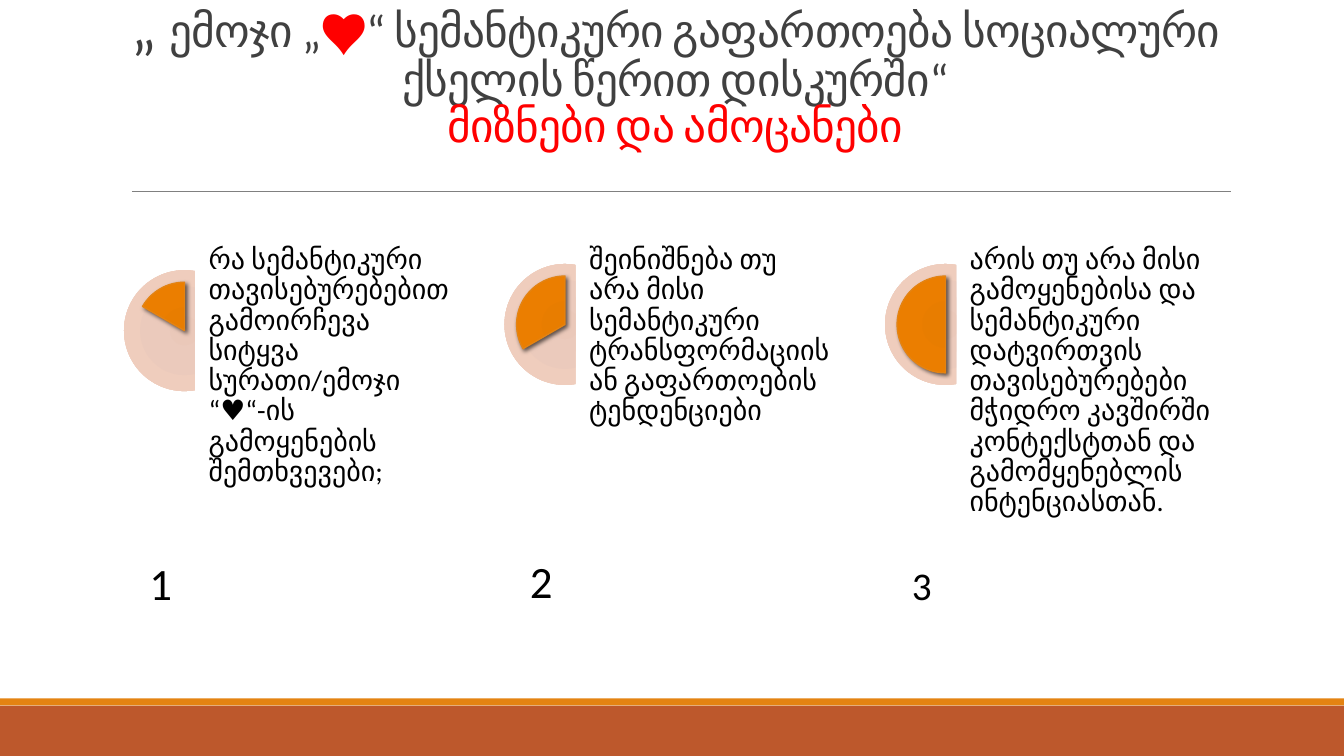
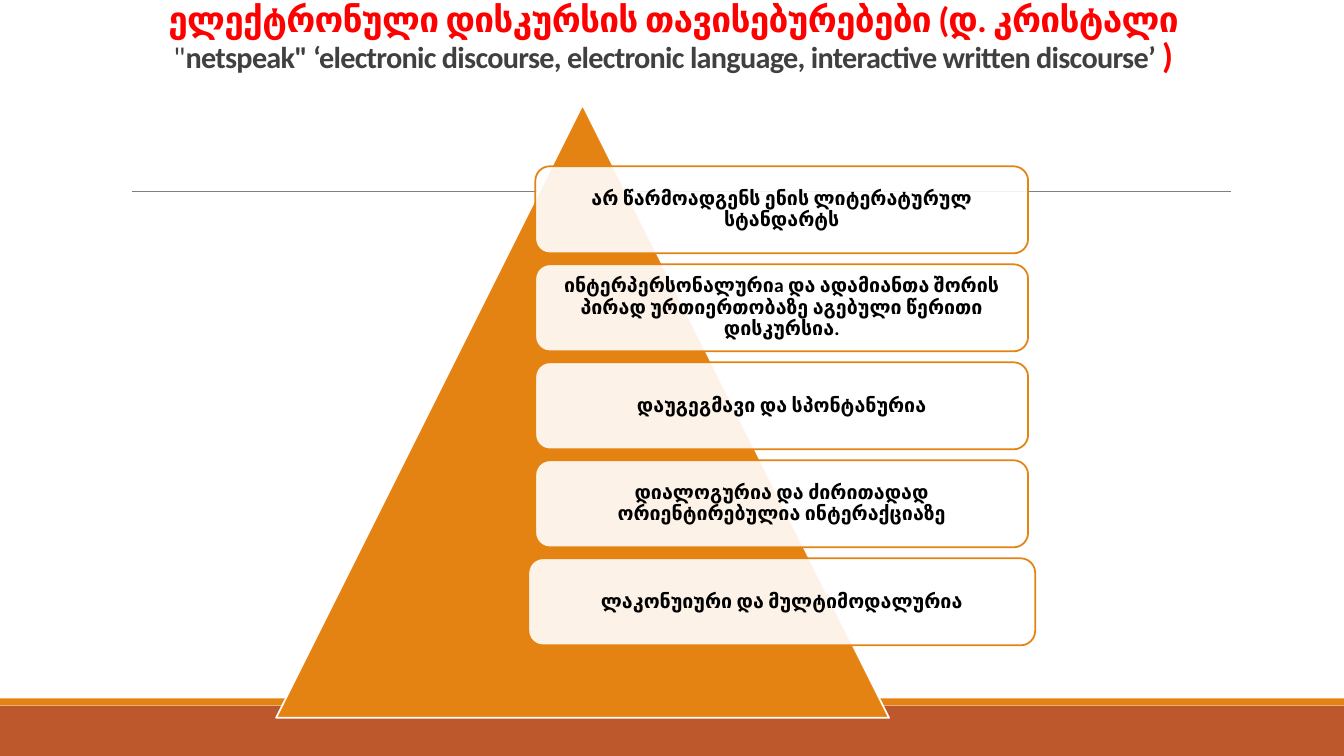
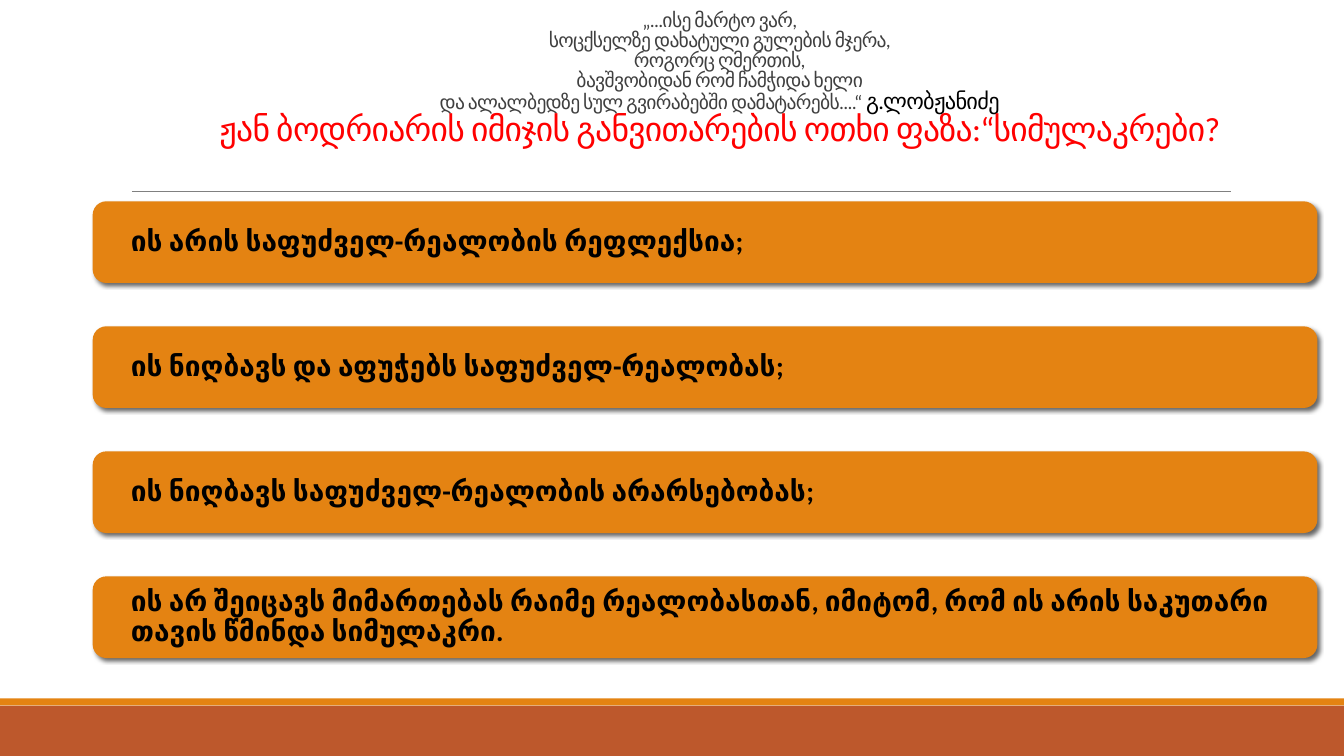
from pptx import Presentation
from pptx.dml.color import RGBColor
from pptx.enum.shapes import MSO_CONNECTOR, MSO_SHAPE
from pptx.enum.text import MSO_ANCHOR, PP_ALIGN
from pptx.oxml import parse_xml
from pptx.oxml.ns import nsdecls, qn
from pptx.util import Pt

FONT = "Calibri"
ORANGE, RUST, GREY, RULE = "E48312", "BD582C", "404040", "808080"
RED, BLACK, WHITE = "FF0000", "000000", "FFFFFF"
PALE_STOPS = [(0, "EAC8B9"), (34, "EBCABC"), (70, "EFCDBD"), (100, "F7D8CA")]
PIE_STOPS = [(0, "E57B00"), (34, "E87D00"), (70, "EB7E00"), (100, "EF8407")]

GOALS_TITLE = [
    [("„ ", {"size": 43.2}), ("ემოჯი „", {}), ("♥", {"color": RED}),
     ("“ სემანტიკური გაფართოება სოციალური ქსელის წერით დისკურში“", {})],
    [("მიზნები და ამოცანები", {"color": RED})],
]
GOALS = [
    {"number": "1", "size": 32, "bottom": 435.6, "dial_top": 193, "start": 126,
     "text": "რა სემანტიკური თავისებურებებით გამოირჩევა სიტყვა სურათი/ემოჯი "
             "“♥“-ის გამოყენების შემთხვევები;"},
    {"number": "2", "size": 32, "bottom": 434.2, "dial_top": 188.6, "start": 90,
     "text": "შეინიშნება თუ არა მისი სემანტიკური ტრანსფორმაციის ან გაფართოების "
             "ტენდენციები"},
    {"number": "3", "size": 28, "bottom": 434.9, "dial_top": 188.6, "start": 54,
     "text": "არის თუ არა მისი გამოყენებისა და სემანტიკური დატვირთვის "
             "თავისებურებები მჭიდრო კავშირში კონტექსტთან და გამომყენებლის "
             "ინტენციასთან."},
]

FEATURES_TITLE = [[
    ("ელექტრონული დისკურსის თავისებურებები (დ. კრისტალი ",
     {"size": 25.2, "color": RED, "bold": True}),
    ("\"", {}),
    ("netspeak\" ‘electronic discourse, electronic language, "
     "interactive written discourse’ ", {"bold": True}),
    (")", {"size": 25.2, "color": RED, "bold": True}),
]]
FEATURES = [
    ("არ წარმოადგენს ენის ლიტერატურულ სტანდარტს", 352),
    ("ინტერპერსონალურიa და ადამიანთა შორის პირად ურთიერთობაზე აგებული "
     "წერითი დისკურსია.", 352),
    ("დაუგეგმავი და სპონტანურია", 352),
    ("დიალოგურია და ძირითადად ორიენტირებულია ინტერაქციაზე", 352),
    ("ლაკონუიური და მულტიმოდალურია", 362),
]

PHASES_TITLE = [
    [("„...ისე მარტო ვარ,", {})],
    [("სოცქსელზე დახატული გულების მჯერა,", {})],
    [("როგორც ღმერთის,", {})],
    [("ბავშვობიდან რომ ჩამჭიდა ხელი", {})],
    [("და ალალბედზე სულ გვირაბებში დამატარებს....“ ", {}),
     ("გ.ლობჟანიძე", {"size": 16, "color": BLACK})],
    [("ჟან ბოდრიარის იმიჯის განვითარების ოთხი ფაზა:“სიმულაკრები?",
      {"size": 24, "color": RED})],
]
PHASES = [
    "ის არის საფუძველ-რეალობის რეფლექსია;",
    "ის ნიღბავს და აფუჭებს საფუძველ-რეალობას;",
    "ის ნიღბავს საფუძველ-რეალობის არარსებობას;",
    "ის არ შეიცავს მიმართებას რაიმე რეალობასთან, იმიტომ, რომ ის არის "
    "საკუთარი თავის წმინდა სიმულაკრი.",
]


def rgb(value):
    return RGBColor.from_string(value)


def write(shape, lines, size, color=BLACK, bold=False, align=PP_ALIGN.LEFT,
          anchor=MSO_ANCHOR.TOP, spacing=0.9, tracking=0, insets=(0, 0)):
    if isinstance(lines, str):
        lines = [[(lines, {})]]
    frame = shape.text_frame
    frame.word_wrap = True
    frame.vertical_anchor = anchor
    frame.margin_left = frame.margin_right = Pt(insets[0])
    frame.margin_top = frame.margin_bottom = Pt(insets[1])
    for index, line in enumerate(lines):
        para = frame.add_paragraph() if index else frame.paragraphs[0]
        para.alignment = align
        para.line_spacing = spacing
        for text, changes in line:
            span = para.add_run()
            span.text = text
            span.font.name = FONT
            span.font.size = Pt(changes.get("size", size))
            span.font.bold = changes.get("bold", bold)
            span.font.color.rgb = rgb(changes.get("color", color))
            if tracking:
                span.font._element.set("spc", str(int(tracking * 100)))


def add_box(page, place):
    return page.shapes.add_textbox(*map(Pt, place))


def add_shape(page, kind, place, fill=None, line=None, width=1.25, alpha=None,
              stops=None, shadow=False, adjust=()):
    shape = page.shapes.add_shape(kind, *map(Pt, place))
    for index, value in enumerate(adjust):
        shape.adjustments[index] = value
    shape.fill.solid()
    shape.fill.fore_color.rgb = rgb(fill or stops[0][1])
    solid = shape._element.spPr.find(qn("a:solidFill"))
    if alpha:
        solid[0].append(parse_xml(f'<a:alpha {nsdecls("a")} val="{alpha * 1000}"/>'))
    if stops:
        marks = "".join(f'<a:gs pos="{at * 1000}"><a:srgbClr val="{color}"/></a:gs>'
                        for at, color in stops)
        solid.getparent().replace(solid, parse_xml(
            f'<a:gradFill {nsdecls("a")} rotWithShape="1"><a:gsLst>{marks}</a:gsLst>'
            '<a:path path="circle"><a:fillToRect l="100000" t="100000" '
            'r="100000" b="100000"/></a:path></a:gradFill>'))
    if line:
        shape.line.color.rgb = rgb(line)
        shape.line.width = Pt(width)
    else:
        shape.line.fill.background()
    shape.shadow.inherit = False
    if shadow:
        shape._element.spPr.find(qn("a:effectLst")).append(parse_xml(
            f'<a:outerShdw {nsdecls("a")} blurRad="{Pt(3)}" dist="{Pt(2)}" '
            'dir="2700000" algn="tl" rotWithShape="0"><a:srgbClr val="000000">'
            '<a:alpha val="60000"/></a:srgbClr></a:outerShdw>'))
    return shape


def add_page(deck, title, place, size):
    page = deck.slides.add_slide(deck.slide_layouts[6])
    add_shape(page, MSO_SHAPE.RECTANGLE, (0, 504, 960, 36), RUST)
    add_shape(page, MSO_SHAPE.RECTANGLE, (0, 498.76, 960, 5.2), ORANGE)
    rule = page.shapes.add_connector(MSO_CONNECTOR.STRAIGHT,
                                     Pt(94.3), Pt(136.8), Pt(879), Pt(136.8))
    rule.line.color.rgb = rgb(RULE)
    rule.line.width = Pt(0.5)
    rule._element.spPr.append(parse_xml(f'<a:effectLst {nsdecls("a")}/>'))
    write(add_box(page, place), title, size, color=GREY, align=PP_ALIGN.CENTER,
          anchor=MSO_ANCHOR.BOTTOM, spacing=0.85, tracking=-0.5, insets=(7.2, 3.6))
    return page


def build_goals(deck):
    page = add_page(deck, GOALS_TITLE, (86.4, 0, 792, 112.3), 32.4)
    dial, inset = 86.4, 8.64
    for index, goal in enumerate(GOALS):
        left, top = 88.6 + index * 271.8, goal["dial_top"]
        add_shape(page, MSO_SHAPE.CHORD, (left, top, dial, dial),
                  stops=PALE_STOPS, adjust=(48, 168))
        add_shape(page, MSO_SHAPE.PIE,
                  (left + inset, top + inset, dial - 2 * inset, dial - 2 * inset),
                  stops=PIE_STOPS, line=ORANGE, width=1, shadow=True,
                  adjust=(goal["start"], 162))
        write(add_box(page, (left - 12, goal["bottom"] - 46, 76.4, 46)),
              goal["number"], goal["size"], align=PP_ALIGN.CENTER,
              anchor=MSO_ANCHOR.BOTTOM)
        write(add_box(page, (left + 60.4, 175.4, 172, 310)), goal["text"], 20)


def build_features(deck):
    page = add_page(deck, FEATURES_TITLE, (83.5, 0, 794.9, 57.6), 21.6)
    add_shape(page, MSO_SHAPE.ISOSCELES_TRIANGLE, (197.2, 74.9, 437.8, 437.8),
              ORANGE, line=WHITE)
    for index, (text, width) in enumerate(FEATURES):
        card = add_shape(page, MSO_SHAPE.ROUNDED_RECTANGLE,
                         (558.4 - width / 2, 118.8 + index * 70, width, 62.2),
                         WHITE, line=ORANGE, alpha=90)
        write(card, text, 14, bold=True, align=PP_ALIGN.CENTER,
              anchor=MSO_ANCHOR.MIDDLE, insets=(4.2, 4.2))


def build_phases(deck):
    page = add_page(deck, PHASES_TITLE, (86.4, -16.6, 855.4, 126), 14)
    for index, text in enumerate(PHASES):
        bar = add_shape(page, MSO_SHAPE.ROUNDED_RECTANGLE,
                        (66.2, 143.8 + index * 89.3, 874.8, 58.3),
                        ORANGE, shadow=True)
        write(bar, text, 20, bold=True, anchor=MSO_ANCHOR.MIDDLE, insets=(24.5, 0))


def main():
    deck = Presentation()
    deck.slide_width, deck.slide_height = Pt(960), Pt(540)
    build_goals(deck)
    build_features(deck)
    build_phases(deck)
    deck.save("out.pptx")


if __name__ == "__main__":
    main()
